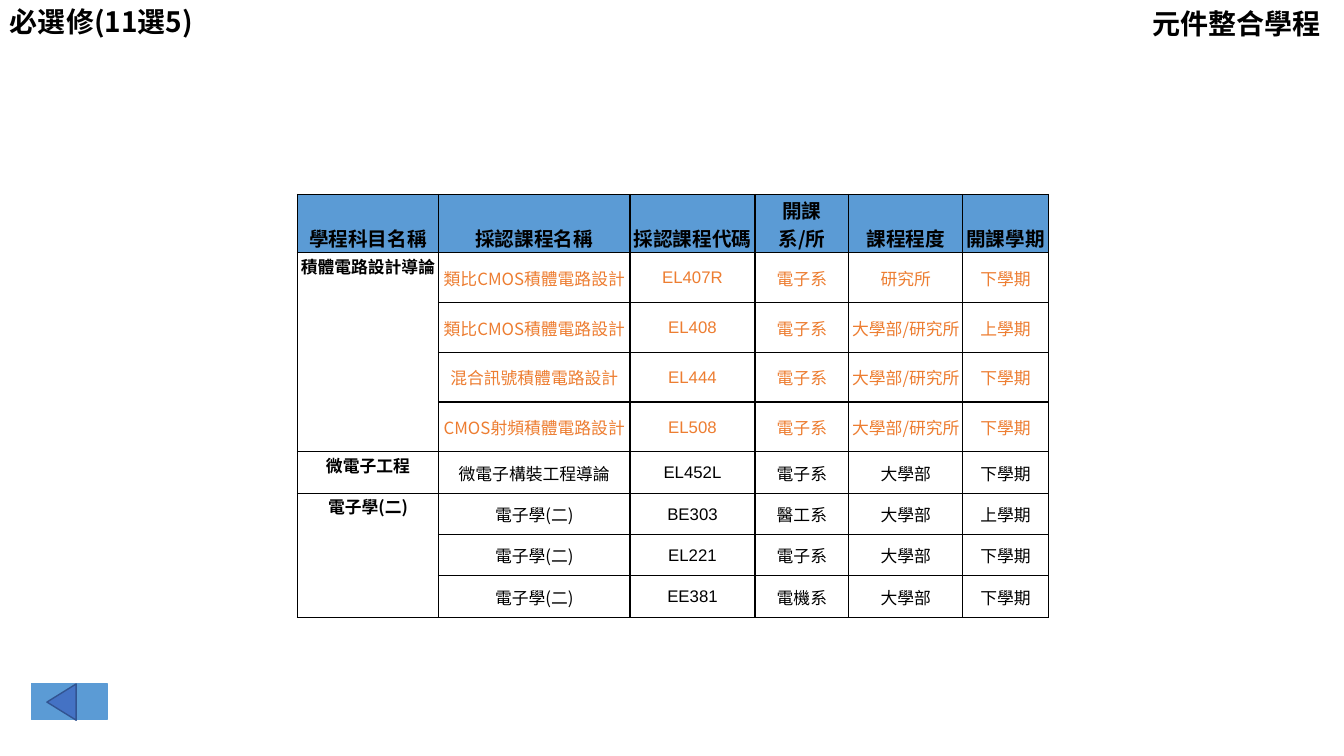
from lxml import etree
from pptx import Presentation
from pptx.dml.color import RGBColor
from pptx.enum.shapes import MSO_SHAPE
from pptx.enum.text import MSO_ANCHOR, PP_ALIGN
from pptx.oxml.ns import qn
from pptx.util import Inches, Pt

RECTANGLE, TRIANGLE = MSO_SHAPE.RECTANGLE, MSO_SHAPE.ISOSCELES_TRIANGLE
TOP, MIDDLE, BOTTOM = MSO_ANCHOR.TOP, MSO_ANCHOR.MIDDLE, MSO_ANCHOR.BOTTOM
LEFT, CENTER = PP_ALIGN.LEFT, PP_ALIGN.CENTER

HEADERS = ["學程科目名稱", "採認課程名稱", "採認課程代碼", "開課\v系/所", "課程程度", "開課學期"]
COLUMN_WIDTHS = [10.5, 14.25, 9.3, 6.98, 8.48, 6.38]  # percent of slide width
ROW_HEIGHT = 5.47  # percent of slide height
CODE_COLUMN = 2

# Subject, colour of its courses, courses
SUBJECTS = [
    ("積體電路設計導論", "ED7D31", [
        ("類比CMOS積體電路設計", "EL407R", "電子系", "研究所", "下學期"),
        ("類比CMOS積體電路設計", "EL408", "電子系", "大學部/研究所", "上學期"),
        ("混合訊號積體電路設計", "EL444", "電子系", "大學部/研究所", "下學期"),
        ("CMOS射頻積體電路設計", "EL508", "電子系", "大學部/研究所", "下學期"),
    ]),
    ("微電子工程", "000000", [
        ("微電子構裝工程導論", "EL452L", "電子系", "大學部", "下學期"),
    ]),
    ("電子學(二)", "000000", [
        ("電子學(二)", "BE303", "醫工系", "大學部", "上學期"),
        ("電子學(二)", "EL221", "電子系", "大學部", "下學期"),
        ("電子學(二)", "EE381", "電機系", "大學部", "下學期"),
    ]),
]


def color(value):
    return RGBColor.from_string(value)


def write(frame, text, size=12, font="Noto Sans CJK SC", ink="000000", bold=False, align=CENTER):
    frame.text = text
    paragraph = frame.paragraphs[0]
    paragraph.alignment = align
    for run in paragraph.runs:
        run.font.size = Pt(size)
        run.font.bold = bold
        run.font.color.rgb = color(ink)
        run.font.name = font
        east_asian = etree.SubElement(run.font._element, qn("a:ea"))
        east_asian.set("typeface", font)


class SlideBuilder:
    """Places elements by percent of the slide's width and height."""

    blue = "5B9BD5"
    white = "FFFFFF"
    black = "000000"

    def __init__(self, presentation):
        self.width = presentation.slide_width
        self.height = presentation.slide_height
        self.slide = presentation.slides.add_slide(presentation.slide_layouts[6])

    def x(self, percent):
        return round(self.width * percent / 100)

    def y(self, percent):
        return round(self.height * percent / 100)

    def box(self, left, top, width, height):
        return self.x(left), self.y(top), self.x(width), self.y(height)

    def heading(self, text, *place):
        frame = self.slide.shapes.add_textbox(*self.box(*place)).text_frame
        frame.word_wrap = True
        write(frame, text, size=20, bold=True, align=LEFT)

    def shape(self, kind, *place, fill, line, rotation=0):
        shape = self.slide.shapes.add_shape(kind, *self.box(*place))
        shape.shadow.inherit = False
        shape.rotation = rotation
        shape.fill.solid()
        shape.fill.fore_color.rgb = color(fill)
        shape.line.color.rgb = color(line)
        shape.line.width = Pt(1)

    def table(self, left, top, widths, row_height, row_count):
        place = self.box(left, top, sum(widths), row_height * row_count)
        table = self.slide.shapes.add_table(row_count, len(widths), *place).table
        for column, width in zip(table.columns, widths):
            column.width = self.x(width)
        for row in table.rows:
            row.height = self.y(row_height)
            for cell in row.cells:
                self.border(cell)
        return table

    def border(self, cell):
        properties = cell._tc.get_or_add_tcPr()
        for side in ("lnL", "lnR", "lnT", "lnB"):
            line = etree.SubElement(properties, qn(f"a:{side}"), w=str(Pt(1)))
            fill = etree.SubElement(line, qn("a:solidFill"))
            etree.SubElement(fill, qn("a:srgbClr"), val=self.black)

    def cell(self, cell, text, fill=white, anchor=MIDDLE, **style):
        cell.margin_left = cell.margin_right = cell.margin_top = Inches(0.01)
        cell.margin_bottom = 0
        cell.vertical_anchor = anchor
        cell.fill.solid()
        cell.fill.fore_color.rgb = color(fill)
        write(cell.text_frame, text, **style)


def main():
    presentation = Presentation()
    presentation.slide_width = Inches(13.33)
    presentation.slide_height = Inches(7.5)
    builder = SlideBuilder(presentation)

    # Course table
    row_count = 1 + sum(len(courses) for _, _, courses in SUBJECTS)
    table = builder.table(22.13, 25.73, COLUMN_WIDTHS, ROW_HEIGHT, row_count)
    for column, header in enumerate(HEADERS):
        builder.cell(table.cell(0, column), header, fill=builder.blue,
                     anchor=BOTTOM, size=14, bold=True)
    first_row = 1
    for subject, ink, courses in SUBJECTS:
        subject_cell = table.cell(first_row, 0)
        if len(courses) > 1:
            subject_cell.merge(table.cell(first_row + len(courses) - 1, 0))
        builder.cell(subject_cell, subject, anchor=TOP, bold=True)
        for row, course in enumerate(courses, first_row):
            for column, text in enumerate(course, 1):
                font = "Arial" if column == CODE_COLUMN else "Noto Sans CJK SC"
                builder.cell(table.cell(row, column), text, ink=ink, font=font)
        first_row += len(courses)

    # Headings
    builder.heading("必選修(11選5)", 0, 0, 15.23, 5.87)
    builder.heading("元件整合學程", 85, 0.27, 15, 5.87)

    # Back button
    builder.shape(RECTANGLE, 2.33, 90.4, 5.63, 4.8, fill=builder.blue, line=builder.blue)
    builder.shape(TRIANGLE, 3.23, 90.93, 2.7, 3.87, fill="4472C4", line="325491", rotation=270)

    presentation.save("out.pptx")


if __name__ == "__main__":
    main()
